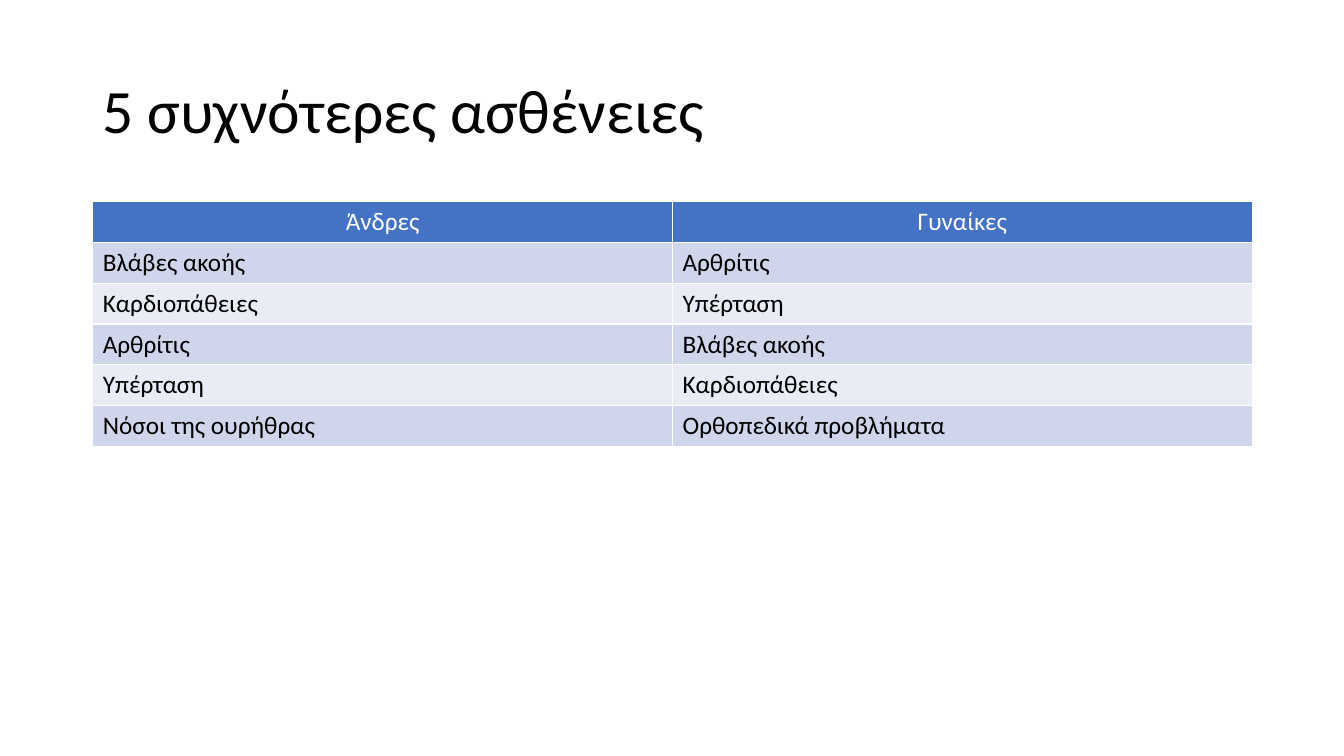
from pptx import Presentation
from pptx.dml.color import RGBColor
from pptx.enum.text import MSO_ANCHOR, PP_ALIGN
from pptx.util import Inches, Pt

MIDDLE = MSO_ANCHOR.MIDDLE
LEFT, CENTER, JUSTIFY = PP_ALIGN.LEFT, PP_ALIGN.CENTER, PP_ALIGN.JUSTIFY

COLORS = {
    "text": "000000",
    "header_text": "FFFFFF",
    "header": "4472C4",
    "odd_row": "CFD5EA",
    "even_row": "E9EBF5",
}

DISEASES = [
    ("Άνδρες", "Γυναίκες"),
    ("Βλάβες ακοής", "Αρθρίτις"),
    ("Καρδιοπάθειες", "Υπέρταση"),
    ("Αρθρίτις", "Βλάβες ακοής"),
    ("Υπέρταση", "Καρδιοπάθειες"),
    ("Νόσοι της ουρήθρας", "Ορθοπεδικά προβλήματα"),
]


class SlideBuilder:
    font_name = "Calibri"
    margin = 0.92
    content_width = 11.5

    def __init__(self, presentation):
        self.slide = presentation.slides.add_slide(presentation.slide_layouts[6])

    def style_text(self, paragraph, text, size, color, align):
        paragraph.text = text
        paragraph.alignment = align
        font = paragraph.font
        font.name = self.font_name
        font.size = Pt(size)
        font.bold = False
        font.color.rgb = RGBColor.from_string(COLORS[color])

    def title(self, text, top, height):
        box = self.slide.shapes.add_textbox(
            Inches(self.margin), Inches(top), Inches(self.content_width), Inches(height)
        )
        frame = box.text_frame
        frame.word_wrap = True
        frame.vertical_anchor = MIDDLE
        heading = frame.paragraphs[0]
        self.style_text(heading, text, 44, "text", LEFT)
        heading.line_spacing = 0.9

    def table(self, rows, top, height):
        """Add a table with a header row; its white rules come from the table style."""
        table = self.slide.shapes.add_table(
            len(rows), len(rows[0]),
            Inches(self.margin), Inches(top), Inches(self.content_width), Inches(height),
        ).table
        for row_index, row in enumerate(rows):
            if row_index == 0:
                fill, color, align = "header", "header_text", CENTER
            else:
                fill = "odd_row" if row_index % 2 else "even_row"
                color, align = "text", JUSTIFY
            for column_index, text in enumerate(row):
                cell = table.cell(row_index, column_index)
                cell.fill.solid()
                cell.fill.fore_color.rgb = RGBColor.from_string(COLORS[fill])
                self.style_text(cell.text_frame.paragraphs[0], text, 18, color, align)


def main():
    presentation = Presentation()
    presentation.slide_width = Inches(13.33)
    presentation.slide_height = Inches(7.5)
    builder = SlideBuilder(presentation)
    builder.title("5 συχνότερες ασθένειες", top=0.4, height=1.45)
    builder.table(DISEASES, top=2, height=2.43)
    presentation.save("out.pptx")


if __name__ == "__main__":
    main()
